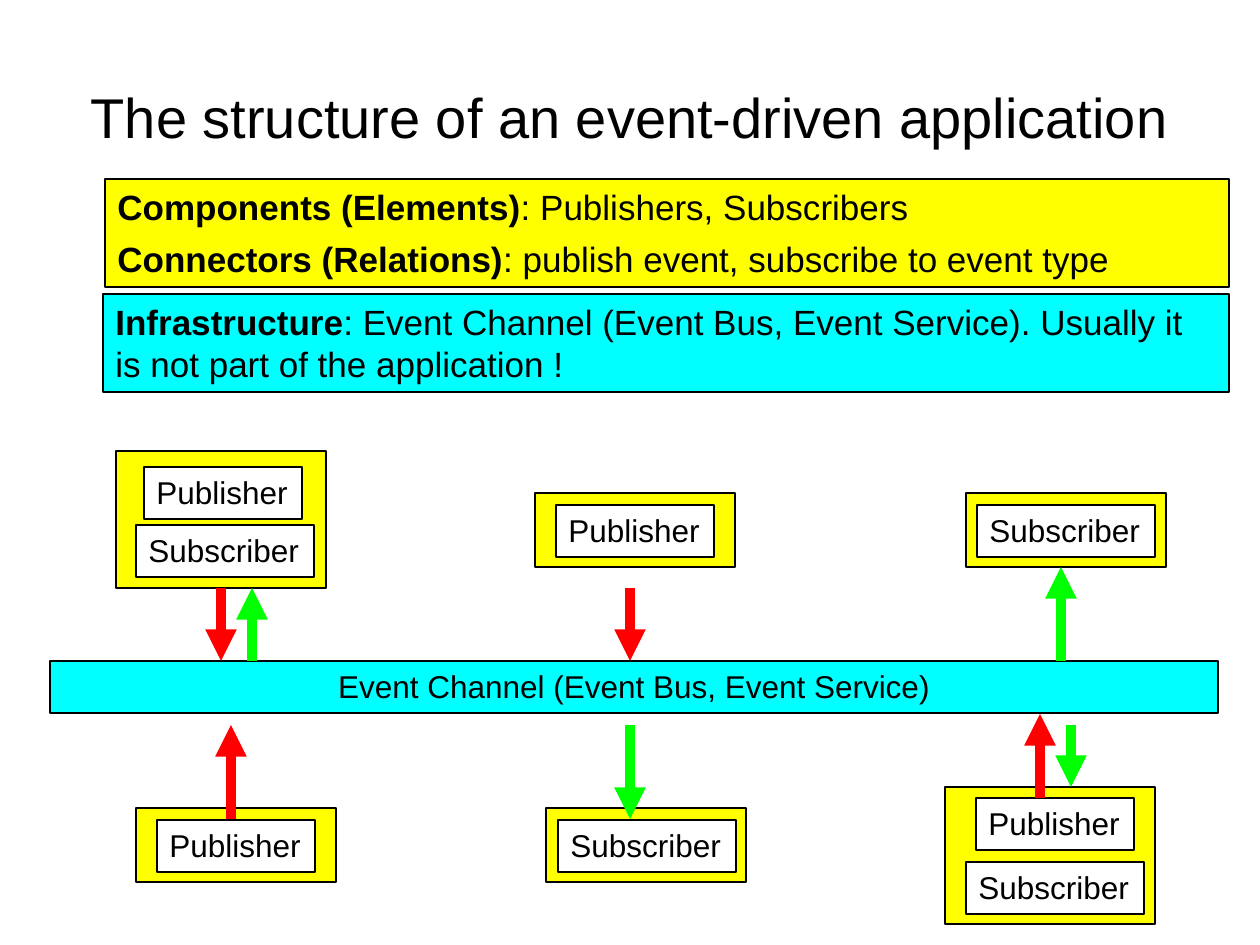
from dataclasses import dataclass

from lxml import etree
from pptx import Presentation
from pptx import util as u
from pptx.dml.color import RGBColor
from pptx.enum import shapes, text
from pptx.oxml.ns import qn

PX_PER_INCH = 126


@dataclass(frozen=True)
class Theme:
    font: str = "Arial"
    ink: str = "000000"
    component: str = "FFFF00"
    infrastructure: str = "00FFFF"
    label: str = "FFFFFF"
    publish: str = "FF0000"
    subscribe: str = "00FF00"
    title_size: int = 32
    body_size: int = 20
    label_size: int = 18
    outline: float = 0.75
    arrow: int = 6


THEME = Theme()
LABEL_HEIGHT = 52
LABEL_WIDTHS = {"Publisher": 158, "Subscriber": 178}

# Component boxes: left, top, width, height
HOSTS = {
    "top left": (116, 451, 210, 137),
    "top middle": (535, 493, 200, 74),
    "top right": (966, 493, 200, 74),
    "bottom left": (136, 808, 200, 74),
    "bottom middle": (546, 808, 200, 74),
    "bottom right": (945, 787, 210, 137),
}

# Roles inside the components: name, left, top
ROLES = [
    ("Publisher", 144, 467), ("Subscriber", 136, 525),
    ("Publisher", 556, 505), ("Subscriber", 977, 505),
    ("Publisher", 157, 820), ("Subscriber", 558, 820),
    ("Publisher", 976, 798), ("Subscriber", 966, 862),
]

# Event flows: x, start y, end y, colour, component joined at its bottom
FLOWS = [
    (221, 588, 661, THEME.publish, "top left"),
    (1040, 798, 714, THEME.publish, None),
    (630, 588, 661, THEME.publish, None),
    (231, 819, 725, THEME.publish, None),
    (252, 661, 588, THEME.subscribe, None),
    (1061, 661, 567, THEME.subscribe, None),
    (630, 725, 819, THEME.subscribe, None),
    (1071, 725, 787, THEME.subscribe, None),
]


def px(length):
    return u.Emu(round(length * u.Inches(1) / PX_PER_INCH))


def style_paragraph(paragraph, size, alignment):
    paragraph.alignment = alignment
    paragraph.font.name = THEME.font
    paragraph.font.size = u.Pt(size)
    paragraph.font.color.rgb = RGBColor.from_string(THEME.ink)


def add_title(slide, wording):
    title = slide.shapes.title
    title.left, title.top, title.width, title.height = map(px, (63, 38, 1134, 157))
    frame = title.text_frame
    frame.text = wording
    frame.vertical_anchor = text.MSO_ANCHOR.MIDDLE
    style_paragraph(frame.paragraphs[0], THEME.title_size, text.PP_ALIGN.CENTER)


def add_box(slide, bounds, fill):
    shape = slide.shapes.add_shape(shapes.MSO_SHAPE.RECTANGLE, *map(px, bounds))
    shape.shadow.inherit = False
    shape.fill.solid()
    shape.fill.fore_color.rgb = RGBColor.from_string(fill)
    shape.line.color.rgb = RGBColor.from_string(THEME.ink)
    shape.line.width = u.Pt(THEME.outline)
    return shape


def add_label(slide, bounds, fill, wording, alignment=text.PP_ALIGN.LEFT, wrap=False):
    frame = add_box(slide, bounds, fill).text_frame
    frame.text = wording
    frame.word_wrap = wrap
    frame.vertical_anchor = text.MSO_ANCHOR.TOP
    style_paragraph(frame.paragraphs[0], THEME.label_size, alignment)


def add_definitions(slide, bounds, fill, definitions):
    frame = add_box(slide, bounds, fill).text_frame
    frame.word_wrap = True
    frame.vertical_anchor = text.MSO_ANCHOR.TOP
    for index, (term, meaning) in enumerate(definitions):
        paragraph = frame.add_paragraph() if index else frame.paragraphs[0]
        style_paragraph(paragraph, THEME.body_size, text.PP_ALIGN.LEFT)
        paragraph.space_before = u.Pt(6 if index else 0)
        term_run = paragraph.add_run()
        term_run.text = term
        term_run.font.bold = True
        paragraph.add_run().text = f": {meaning}"


def add_arrow(slide, x, start, end, colour, source=None):
    arrow = slide.shapes.add_connector(
        shapes.MSO_CONNECTOR.STRAIGHT, px(x), px(start), px(x), px(end))
    if source is not None:
        arrow.begin_connect(source, 2)
        arrow.end_x = arrow.begin_x
    arrow.line.color.rgb = RGBColor.from_string(colour)
    arrow.line.width = u.Pt(THEME.arrow)
    properties = arrow.element.spPr
    etree.SubElement(properties.find(qn("a:ln")), qn("a:tailEnd"), type="triangle")
    etree.SubElement(properties, qn("a:effectLst"))


def main():
    presentation = Presentation()
    presentation.slide_width = u.Inches(10)
    presentation.slide_height = u.Inches(7.5)
    slide = presentation.slides.add_slide(presentation.slide_layouts[5])

    add_title(slide, "The structure of an event-driven application")

    # Components and the roles they play
    hosts = {name: add_box(slide, bounds, THEME.component)
             for name, bounds in HOSTS.items()}
    for role, left, top in ROLES:
        bounds = (left, top, LABEL_WIDTHS[role], LABEL_HEIGHT)
        add_label(slide, bounds, THEME.label, role)

    # Event channel and the flows to and from it
    add_label(slide, (50, 661, 1168, LABEL_HEIGHT), THEME.infrastructure,
              "Event Channel (Event Bus, Event Service)",
              text.PP_ALIGN.CENTER, wrap=True)
    for x, start, end, colour, host in FLOWS:
        add_arrow(slide, x, start, end, colour, hosts.get(host))

    # Definitions
    add_definitions(slide, (105, 179, 1124, 108), THEME.component, [
        ("Components (Elements)", "Publishers, Subscribers"),
        ("Connectors (Relations)", "publish event, subscribe to event type"),
    ])
    add_definitions(slide, (103, 294, 1126, 98), THEME.infrastructure, [
        ("Infrastructure", "Event Channel (Event Bus, Event Service). "
                           "Usually it is not part of the application !"),
    ])

    presentation.save("out.pptx")


if __name__ == "__main__":
    main()
